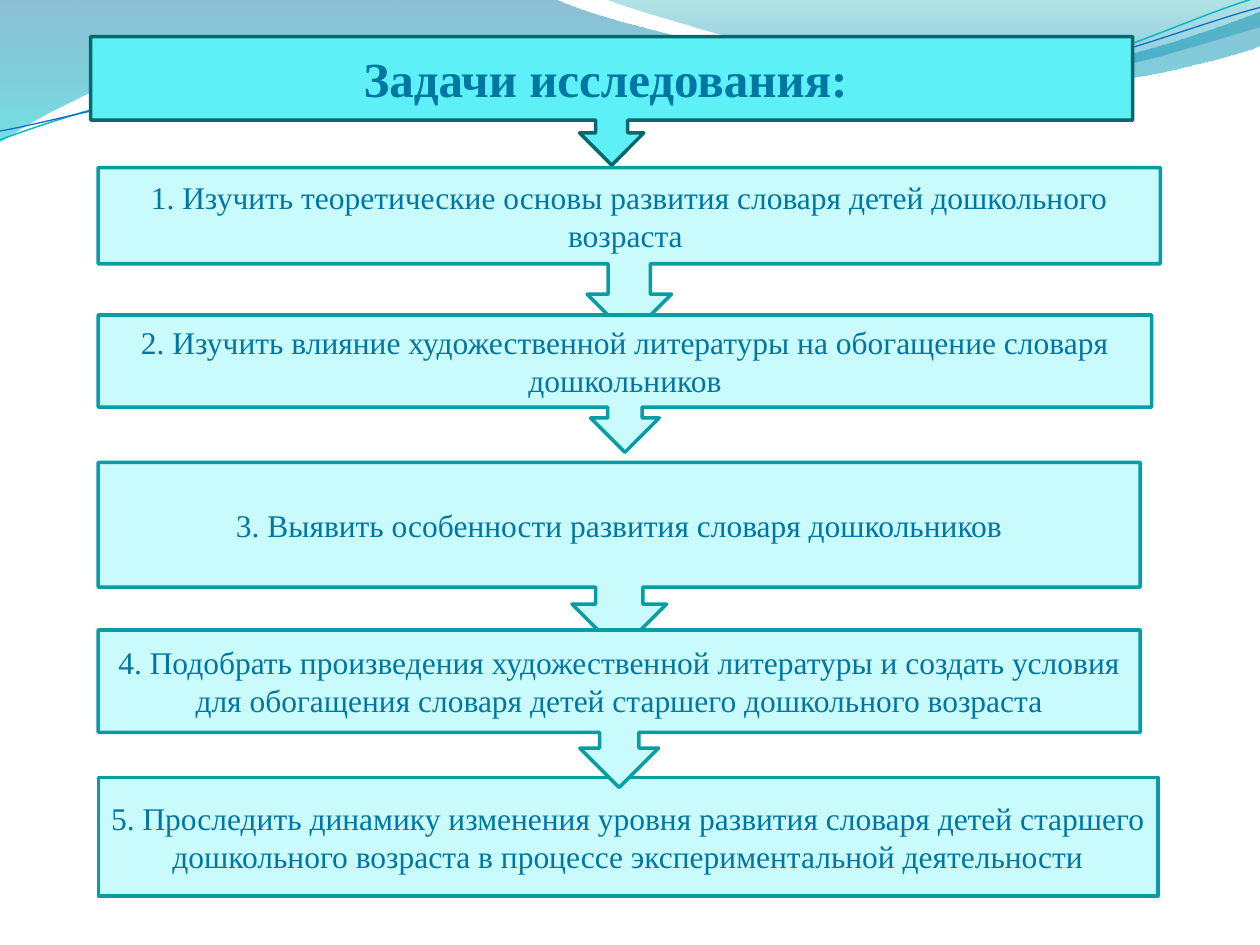
import math
from dataclasses import dataclass

from lxml import etree
from pptx import Presentation, util as u
from pptx.dml.color import RGBColor
from pptx.enum import shapes, text
from pptx.oxml import ns

NAVY = RGBColor(0x00, 0x74, 0xA1)
CYAN = RGBColor(0x00, 0xC6, 0xCF)
TEAL = RGBColor(0x00, 0xA1, 0xA9)
AZURE = RGBColor(0x00, 0x8B, 0xBF)
AQUA_LINE = RGBColor(0x0A, 0xB8, 0xBF)
BLUE_LINE = RGBColor(0x0F, 0x6F, 0xC6)
TITLE_FILL = RGBColor(0x5E, 0xF0, 0xF7)
TITLE_EDGE = RGBColor(0x06, 0x68, 0x6C)
TASK_FILL = RGBColor(0xC9, 0xFA, 0xFC)
TASK_EDGE = RGBColor(0x08, 0x9C, 0xA3)
TEXT_COLOR = RGBColor(0x00, 0x76, 0xA3)
FONT = "Times New Roman"
STRAND_TILT = -2.7
CALLOUT = shapes.MSO_SHAPE.DOWN_ARROW_CALLOUT
RECTANGLE = shapes.MSO_SHAPE.RECTANGLE


@dataclass
class Stop:
    position: float
    color: RGBColor
    opacity: int


@dataclass
class Wave:
    segments: list
    stops: tuple


@dataclass
class Strand:
    segments: list
    center: tuple
    color: RGBColor
    width: float


@dataclass
class Task:
    label: str
    left: float
    top: float
    width: float
    height: float
    body: float = 0.65
    kind: int = CALLOUT


WAVES = [
    Wave([(0, 0), (4.4, -0.01),
          (4.76, 0.17, 6.64, 0.63, 7.58, 0.63), (8.53, 0.63, 9.58, 0.26, 10, 0.09),
          (10.01, 0.36),
          (9.83, 0.44, 8.7, 0.76, 7.46, 0.75), (6.22, 0.75, 3.82, 0.28, 2.57, 0.34),
          (1.29, 0.36, 0.46, 0.83, -0.01, 1.13), (0, 0)],
         (Stop(0, NAVY, 45), Stop(1, CYAN, 55))),
    Wave([(4.79, -0.01),
          (5.09, 0.11, 6.82, 0.62, 7.69, 0.65), (8.56, 0.69, 9.61, 0.32, 10, 0.21),
          (10, 0), (4.79, -0.01)],
         (Stop(0, TEAL, 30), Stop(0.8, AZURE, 45))),
]

STRANDS = [
    Strand([(0, 1.11), (0.48, 0.93, 1.58, 0.57, 2.77, 0.52),
            (3.95, 0.47, 5.93, 0.89, 7.13, 0.8), (8.33, 0.71, 9.38, 0.15, 9.98, -0.02)],
           (4.99, 0.58), AQUA_LINE, 0.85),
    Strand([(0, 1.04), (0.47, 0.96, 1.64, 0.61, 2.83, 0.56),
            (4.03, 0.51, 5.97, 0.84, 7.17, 0.75), (8.36, 0.67, 9.41, 0.21, 10, 0.06)],
           (5, 0.59), BLUE_LINE, 0.75),
]

HEADING = Task("Задачи исследования: ", 0.72, 0.29, 8.27, 1.02)

TASKS = [
    Task("1. Изучить теоретические основы развития словаря детей дошкольного возраста ",
         0.78, 1.33, 8.43, 1.34, 0.57),
    Task("2. Изучить влияние художественной литературы на обогащение словаря дошкольников",
         0.78, 2.5, 8.36, 1.09, 0.67),
    Task("3. Выявить особенности развития словаря дошкольников",
         0.78, 3.67, 8.27, 1.5, 0.66),
    Task("5. Проследить динамику изменения уровня развития словаря детей старшего "
         "дошкольного возраста в процессе экспериментальной деятельности",
         0.78, 6.17, 8.41, 0.94, kind=RECTANGLE),
    Task("4. Подобрать произведения художественной литературы и создать условия "
         "для обогащения словаря детей старшего дошкольного возраста",
         0.78, 5, 8.27, 1.25),
]


def turn(point: tuple, center: tuple, degrees: float) -> tuple:
    angle = math.radians(degrees)
    dx, dy = point[0] - center[0], point[1] - center[1]
    return (center[0] + dx * math.cos(angle) - dy * math.sin(angle),
            center[1] + dx * math.sin(angle) + dy * math.cos(angle))


def draw_outline(page, segments: list, *, close: bool, center=(0, 0), tilt: float = 0):
    corners = [pair for segment in segments for pair in zip(segment[::2], segment[1::2])]
    turned = [turn(corner, center, -tilt) for corner in corners]
    points = [(u.Inches(x), u.Inches(y)) for x, y in turned]
    builder = page.shapes.build_freeform(*points[0])
    builder.add_line_segments(points[1:], close=close)
    outline = builder.convert_to_shape()
    outline.shadow.inherit = False
    outline.rotation = tilt
    lines = iter(list(outline.element.spPr.iter(ns.qn("a:lnTo"))))
    for segment in segments[1:]:
        first = next(lines)
        if len(segment) == 6:
            curve = etree.Element(ns.qn("a:cubicBezTo"))
            first.addprevious(curve)
            for line in (first, next(lines), next(lines)):
                curve.append(line[0])
                line.getparent().remove(line)
    return outline


def draw_wave(page, wave: Wave) -> None:
    outline = draw_outline(page, wave.segments, close=True)
    outline.line.fill.background()
    outline.fill.gradient()
    outline.fill.gradient_angle = 270
    for target, stop in zip(outline.fill.gradient_stops, wave.stops):
        target.position = stop.position
        target.color.rgb = stop.color
    colors = outline.element.spPr.iter(ns.qn("a:srgbClr"))
    for color, stop in zip(colors, wave.stops):
        etree.SubElement(color, ns.qn("a:alpha"), val=str(stop.opacity * 1000))


def draw_strand(page, strand: Strand) -> None:
    outline = draw_outline(page, strand.segments, close=False,
                           center=strand.center, tilt=STRAND_TILT)
    outline.fill.background()
    outline.line.color.rgb = strand.color
    outline.line.width = u.Pt(strand.width)


def write(frame, label: str, *, size: float, bold: bool = False) -> None:
    frame.word_wrap = True
    frame.auto_size = text.MSO_AUTO_SIZE.NONE
    frame.vertical_anchor = text.MSO_ANCHOR.MIDDLE
    para = frame.paragraphs[0]
    para.alignment = text.PP_ALIGN.CENTER
    span = para.add_run()
    span.text = label
    span.font.name = FONT
    span.font.size = u.Pt(size)
    span.font.bold = bold
    span.font.color.rgb = TEXT_COLOR


def draw_box(page, task: Task, fill: RGBColor, edge: RGBColor):
    box = page.shapes.add_shape(task.kind, u.Inches(task.left), u.Inches(task.top),
                                u.Inches(task.width), u.Inches(task.height))
    if task.kind == CALLOUT:
        box.adjustments[3] = task.body
    box.shadow.inherit = False
    box.fill.solid()
    box.fill.fore_color.rgb = fill
    box.line.color.rgb = edge
    box.line.width = u.Pt(2)
    return box


def draw_heading(page, heading: Task) -> None:
    box = draw_box(page, heading, TITLE_FILL, TITLE_EDGE)
    title = page.shapes.title
    title.left, title.top, title.width = box.left, box.top, box.width
    title.height = u.Inches(heading.height * heading.body)
    write(title.text_frame, heading.label, size=28, bold=True)
    box.element.addnext(title.element)


def main() -> None:
    deck = Presentation()
    deck.slide_width, deck.slide_height = u.Inches(10), u.Inches(7.5)
    page = deck.slides.add_slide(deck.slide_layouts.get_by_name("Title Only"))
    for wave in WAVES:
        draw_wave(page, wave)
    for strand in STRANDS:
        draw_strand(page, strand)
    draw_heading(page, HEADING)
    for task in TASKS:
        box = draw_box(page, task, TASK_FILL, TASK_EDGE)
        write(box.text_frame, task.label, size=18)
    deck.save("out.pptx")


if __name__ == "__main__":
    main()
